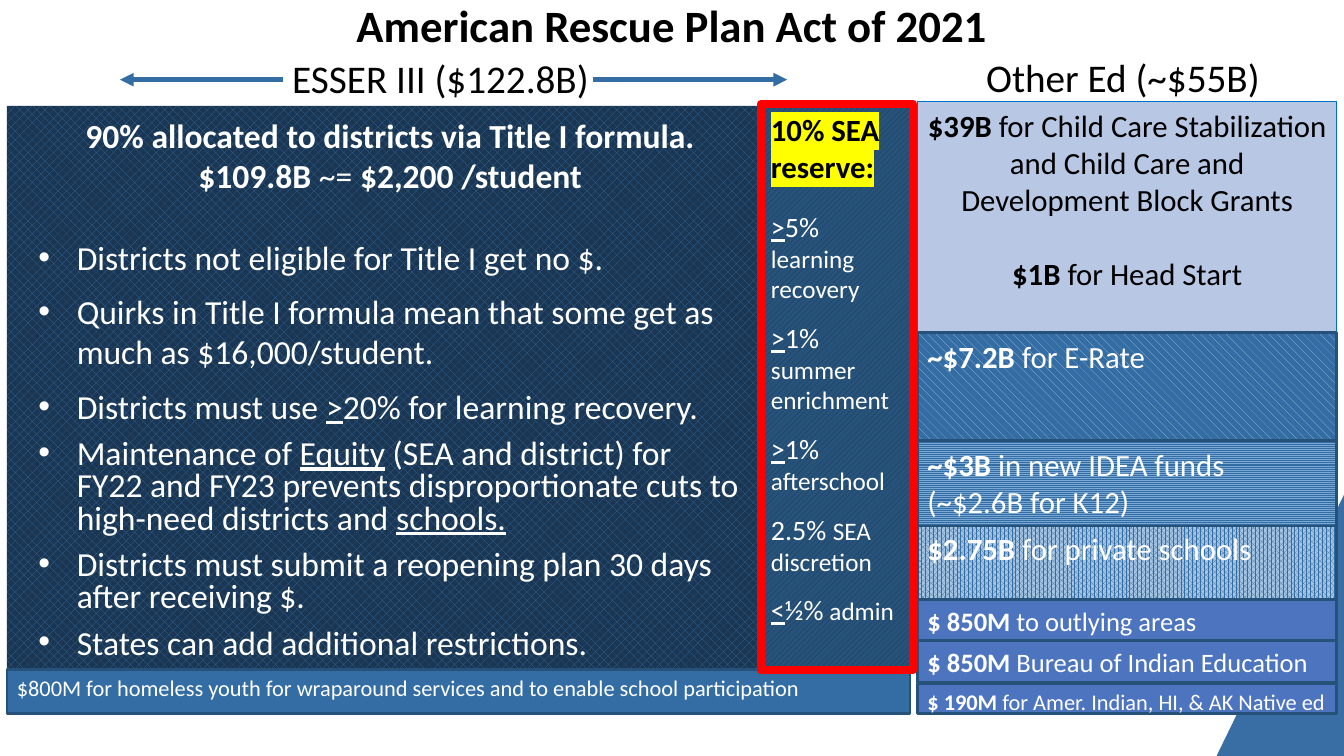
import dataclasses
import typing

import lxml.etree
import pptx
import pptx.dml.color
import pptx.enum.dml
import pptx.enum.shapes
import pptx.enum.text
import pptx.oxml.ns
import pptx.util

Pt = pptx.util.Pt
Align = pptx.enum.text.PP_ALIGN
WHITE, BLACK, BLUE, NAVY = "FFFFFF", "000000", "346DA3", "265179"


@dataclasses.dataclass
class Span:
    text: str
    bold: bool = False
    underline: bool = False
    size: typing.Optional[float] = None
    color: typing.Optional[str] = None
    highlight: typing.Optional[str] = None


@dataclasses.dataclass
class Para:
    spans: list[Span]
    align: typing.Any = Align.LEFT
    before: float = 0
    after: float = 0
    spacing: float = 1.0
    bullet: bool = False


@dataclasses.dataclass
class Paint:
    front: str
    back: typing.Optional[str] = None
    pattern: typing.Optional[str] = None


@dataclasses.dataclass
class Block:
    left: float
    top: float
    width: float
    height: float
    paint: typing.Optional[Paint]
    paras: list[Para] = dataclasses.field(default_factory=list)
    size: float = 22
    color: str = WHITE
    line: typing.Optional[str] = NAVY
    line_width: float = 2


def rgb(value: str) -> pptx.dml.color.RGBColor:
    return pptx.dml.color.RGBColor.from_string(value)


def add_child(parent, tag: str, **attributes: str):
    return lxml.etree.SubElement(parent, pptx.oxml.ns.qn(tag), **attributes)


def write(frame, paras: list[Para], size: float, color: str, anchor=pptx.enum.text.MSO_ANCHOR.TOP) -> None:
    frame.word_wrap = True
    frame.auto_size = pptx.enum.text.MSO_AUTO_SIZE.NONE
    frame.vertical_anchor = anchor
    for index, item in enumerate(paras):
        para = frame.add_paragraph() if index else frame.paragraphs[0]
        properties = para._p.get_or_add_pPr()
        indent = Pt(27.4) if item.bullet else 0
        properties.set("marL", str(int(indent)))
        properties.set("indent", str(-int(indent)))
        if item.bullet:
            add_child(properties, "a:buFont", typeface="Arial")
            add_child(properties, "a:buChar", char="•")
        else:
            add_child(properties, "a:buNone")
        para.alignment = item.align
        para.space_before, para.space_after = Pt(item.before), Pt(item.after)
        para.line_spacing = item.spacing
        for span in item.spans:
            if span.text == "\n":
                para.add_line_break()
                continue
            run = para.add_run()
            run.text = span.text
            run.font.name = "Calibri"
            run.font.size = Pt(span.size or size)
            run.font.bold, run.font.underline = span.bold, span.underline
            run.font.color.rgb = rgb(span.color or color)
            if span.highlight:
                properties = run._r.get_or_add_rPr()
                mark = add_child(properties, "a:highlight")
                add_child(mark, "a:srgbClr", val=span.highlight)
                properties.find(pptx.oxml.ns.qn("a:solidFill")).addnext(mark)


def fill_shape(shape, paint: typing.Optional[Paint]) -> None:
    shape.shadow.inherit = False
    if paint is None:
        shape.fill.background()
    elif paint.pattern is None:
        shape.fill.solid()
        shape.fill.fore_color.rgb = rgb(paint.front)
    else:
        shape.fill.patterned()
        shape.fill.pattern = pptx.enum.dml.MSO_PATTERN.from_xml(paint.pattern)
        shape.fill.fore_color.rgb = rgb(paint.front)
        shape.fill.back_color.rgb = rgb(paint.back)


def draw_block(page, block: Block) -> None:
    box = page.shapes.add_shape(
        pptx.enum.shapes.MSO_SHAPE.RECTANGLE,
        Pt(block.left), Pt(block.top), Pt(block.width), Pt(block.height))
    fill_shape(box, block.paint)
    if block.line:
        box.line.color.rgb = rgb(block.line)
        box.line.width = Pt(block.line_width)
    else:
        box.line.fill.background()
    if block.paras:
        write(box.text_frame, block.paras, block.size, block.color)


def draw_arrow(page, start: float, end: float) -> None:
    arrow = page.shapes.add_connector(
        pptx.enum.shapes.MSO_CONNECTOR.STRAIGHT, Pt(start), Pt(56.9), Pt(end), Pt(56.9))
    arrow.line.color.rgb = rgb(BLUE)
    arrow.line.width = Pt(3.25)
    add_child(arrow.line._get_or_add_ln(), "a:tailEnd", type="triangle")
    add_child(arrow._element.spPr, "a:effectLst")


def place(shape, left: float, top: float, width: float, height: float) -> None:
    shape.left, shape.top, shape.width, shape.height = Pt(left), Pt(top), Pt(width), Pt(height)


def fund(amount: str, *purpose: str) -> list[Para]:
    return [Para([Span(amount, bold=True), *map(Span, purpose)])]


def share(sign: str, percent: str, use: str) -> Para:
    signs = [Span(sign, underline=True)] if sign else []
    return Para([*signs, Span(percent), Span(use, size=18)], after=12)


def point(*spans: Span, before: float = 0, spacing: float = 1.0) -> Para:
    return Para(list(spans), before=before, after=10, spacing=spacing, bullet=True)


RIGHT, RIGHT_WIDTH = 655.4, 299.5
SOLID = Paint("4D74BF")
CHILD_CARE = [
    Para([Span("$39B ", bold=True),
          Span("for Child Care Stabilization and Child Care and Development Block Grants")], Align.CENTER),
    Para([Span("$1B ", bold=True), Span("for Head Start")], Align.CENTER, before=26.8),
]
SEA_RESERVE = [
    Para([Span("10% SEA reserve:", bold=True, size=22, color=BLACK, highlight="FFFF00")], after=18),
    share(">", "5% ", "learning recovery"),
    share(">", "1% ", "summer enrichment"),
    share(">", "1% ", "afterschool"),
    share("", "2.5% ", "SEA discretion"),
    share("<", "½%", " admin"),
]
HOMELESS = [Para([Span(
    "$800M for homeless youth for wraparound services and to enable school participation")])]
DISTRICTS = [
    Para([Span("90% allocated to districts via Title I formula.", bold=True)], Align.CENTER),
    Para([Span("$109.8B ", bold=True), Span("~= "), Span("$2,200 /student", bold=True)], Align.CENTER),
    point(Span("Districts not eligible for Title I get no $."), before=29.3),
    point(Span("Quirks in Title I formula mean that some get as much as $16,000/student.")),
    point(Span("Districts must use "), Span(">", underline=True), Span("20% for learning recovery.")),
    point(Span("Maintenance of "), Span("Equity", underline=True),
          Span(" (SEA and district) for FY22 and FY23 prevents disproportionate cuts to "
               "high-need districts and "), Span("schools.", underline=True), spacing=0.8),
    point(Span("Districts must submit a reopening plan 30 days after receiving $."), spacing=0.8),
    point(Span("States can add additional restrictions."), spacing=0.8),
]
BLOCKS = [
    Block(5, 75.6, 548, 403.2, Paint(BLUE, "1A3652", "pct40"), line=None),
    Block(RIGHT, 72.7, RIGHT_WIDTH, 184.3, Paint("B7C7E4"), CHILD_CARE, color=BLACK,
          line="0070C0", line_width=0.75),
    Block(RIGHT, 237.6, RIGHT_WIDTH, 77, Paint("A6C5E2", BLUE, "dashDnDiag"),
          fund("~$7.2B ", "for E-Rate")),
    Block(RIGHT, 375.1, RIGHT_WIDTH, 53.3, Paint(BLUE, "A6C5E2", "pct75"),
          fund("$2.75B ", "for private schools")),
    Block(RIGHT, 314.6, RIGHT_WIDTH, 61.2, Paint(BLUE, "79A8D4", "narHorz"),
          fund("~$3B ", "in new IDEA funds", "\n", "(~$2.6B for K12)")),
    Block(RIGHT, 428.4, RIGHT_WIDTH, 28.8, SOLID, fund("$ 850M ", "to outlying areas"), 19),
    Block(RIGHT, 457.9, RIGHT_WIDTH, 29.5, SOLID, fund("$ 850M ", "Bureau of Indian Education"), 19),
    Block(RIGHT, 488.2, RIGHT_WIDTH, 21.6, SOLID,
          fund("$ 190M ", "for Amer. Indian, HI, & AK Native ed"), 16),
    Block(543.6, 75.6, 105.8, 429.8, Paint("1A3652", "27527A", "wdUpDiag"),
          SEA_RESERVE, 20, line=None),
    Block(5, 478.1, 645.1, 31.7, Paint(BLUE), HOMELESS, 16),
    Block(543.6, 74.2, 108.7, 404.6, None, line="FF0000", line_width=6),
]


def main() -> None:
    deck = pptx.Presentation()
    deck.slide_width, deck.slide_height = Pt(960), Pt(540)
    page = deck.slides.add_slide(deck.slide_layouts[1])

    outline = page.shapes.build_freeform(Pt(960), Pt(353.5))
    outline.add_line_segments([(Pt(869), Pt(540)), (Pt(960), Pt(540))], close=True)
    corner = outline.convert_to_shape()
    fill_shape(corner, Paint("386EA3"))
    corner.line.fill.background()

    title = page.shapes.title
    place(title, 0, 1.4, 960, 31.7)
    write(title.text_frame, [Para([Span("American Rescue Plan Act of 2021", bold=True)], Align.CENTER)],
          32, BLACK, pptx.enum.text.MSO_ANCHOR.MIDDLE)

    for block in BLOCKS:
        draw_block(page, block)

    body = page.placeholders[1]
    place(body, 20.2, 78.5, 517, 440)
    write(body.text_frame, DISTRICTS, 24, WHITE)
    page.shapes.element.append(body.element)

    for start, end in [(202.3, 85.7), (423.4, 562.3)]:
        draw_arrow(page, start, end)
    for left, top, heading in [(161.3, 35.3, "ESSER III ($122.8B)"), (648.7, 34.6, "Other Ed (~$55B)")]:
        box = page.shapes.add_textbox(Pt(left), Pt(top), Pt(306.7), Pt(41))
        write(box.text_frame, [Para([Span(heading)], Align.CENTER)], 28, BLACK)

    deck.save("out.pptx")


if __name__ == "__main__":
    main()
